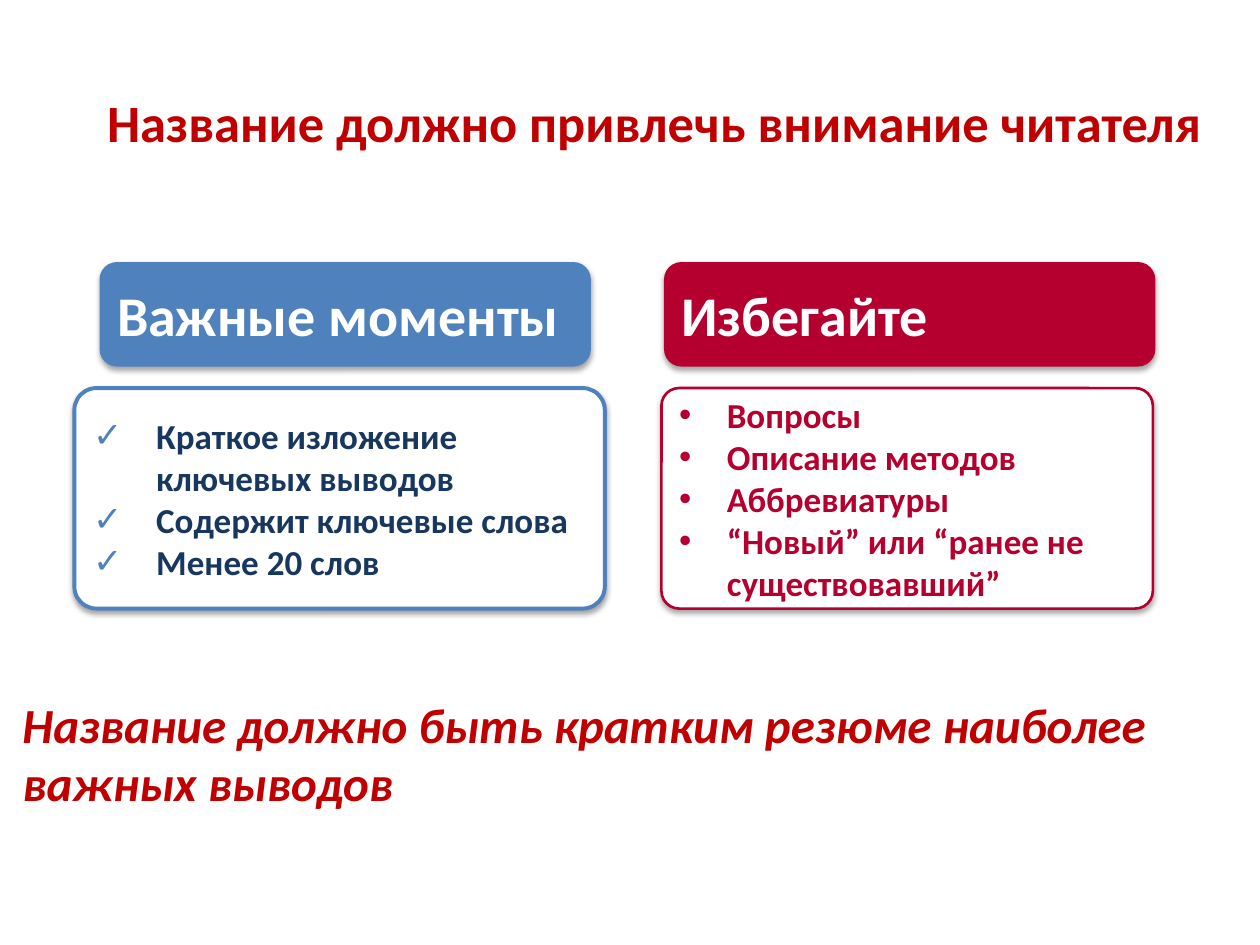
import pptx
import pptx.dml.color
import pptx.enum.shapes
import pptx.enum.text
import pptx.oxml.ns
import pptx.util
from lxml import etree
from pptx.util import Inches

COLORS = {
    "white": "FFFFFF",
    "blue": "4F81BD",
    "navy": "17375E",
    "crimson": "B5002F",
    "red": "C00000",
    "shadow": "000000",
}
ANCHOR = pptx.enum.text.MSO_ANCHOR
ALIGN = pptx.enum.text.PP_ALIGN


def rgb(name):
    return pptx.dml.color.RGBColor.from_string(COLORS[name])


def add_element(parent, tag, **attributes):
    return etree.SubElement(parent, pptx.oxml.ns.qn(tag), attributes)


def add_shadow(shape):
    shape.shadow.inherit = False
    effects = shape._element.spPr.find(pptx.oxml.ns.qn("a:effectLst"))
    shadow = add_element(effects, "a:outerShdw", blurRad="40000", dist="23000",
                         dir="5400000", rotWithShape="0")
    color = add_element(shadow, "a:srgbClr", val=COLORS["shadow"])
    add_element(color, "a:alpha", val="35000")


def add_bullet(paragraph, character, color, indent):
    properties = paragraph._p.get_or_add_pPr()
    properties.set("marL", str(Inches(indent)))
    properties.set("indent", str(-Inches(indent)))
    bullet_color = add_element(properties, "a:buClr")
    add_element(bullet_color, "a:srgbClr", val=COLORS[color])
    add_element(properties, "a:buFont", typeface="Arial")
    add_element(properties, "a:buChar", char=character)


def write(shape, lines, size, color, anchor=ANCHOR.MIDDLE, align=ALIGN.LEFT,
          italic=False, bullet=None):
    frame = shape.text_frame
    frame.word_wrap = True
    frame.vertical_anchor = anchor
    frame.text = "\n".join(lines)
    for paragraph in frame.paragraphs:
        paragraph.alignment = align
        if bullet:
            add_bullet(paragraph, *bullet)
        font = paragraph.font
        font.name = "Calibri"
        font.size = pptx.util.Pt(size)
        font.bold = True
        font.italic = italic
        font.color.rgb = rgb(color)


def add_text(slide, box, text, size, **style):
    shape = slide.shapes.add_textbox(*map(Inches, box))
    write(shape, [text], size, "red", **style)


def add_panel(slide, box, fill, rounding=0.167, line=None, line_width=0):
    shape = slide.shapes.add_shape(
        pptx.enum.shapes.MSO_SHAPE.ROUNDED_RECTANGLE, *map(Inches, box))
    shape.adjustments[0] = rounding
    shape.fill.solid()
    shape.fill.fore_color.rgb = rgb(fill)
    if line:
        shape.line.color.rgb = rgb(line)
        shape.line.width = pptx.util.Pt(line_width)
    else:
        shape.line.fill.background()
    add_shadow(shape)
    return shape


def add_column(slide, heading, heading_left, list_left, list_width, items,
               accent, text_color, rounding, line_width, bullet):
    header = add_panel(slide, (heading_left, 2.08, 3.9, 0.83), accent)
    write(header, [heading], 32, "white")
    body = add_panel(slide, (list_left, 3.08, list_width, 1.75), "white",
                     rounding, accent, line_width)
    write(body, items, 20, text_color, bullet=bullet)


def main():
    presentation = pptx.Presentation()
    presentation.slide_width = Inches(10)
    presentation.slide_height = Inches(7.5)
    slide = presentation.slides.add_slide(presentation.slide_layouts[6])

    add_text(slide, (0.57, 0.8, 9.25, 0.33),
             "Название должно привлечь внимание читателя", 30,
             align=ALIGN.CENTER)
    add_column(slide, "Важные моменты", 0.79, 0.59, 4.21,
               ["Краткое изложение ключевых выводов",
                "Содержит ключевые слова",
                "Менее 20 слов"],
               "blue", "navy", 0.1, 2.25, ("✓", "blue", 0.5))
    add_column(slide, "Избегайте", 5.27, 5.25, 3.9,
               ["Вопросы",
                "Описание методов",
                "Аббревиатуры",
                "“Новый” или “ранее не существовавший”"],
               "crimson", "crimson", 0.08, 1.5, ("•", "crimson", 0.38))
    add_text(slide, (0.08, 5.46, 9.83, 1.04),
             "Название должно быть кратким резюме наиболее важных выводов", 28,
             anchor=ANCHOR.TOP, italic=True)
    presentation.save("out.pptx")


if __name__ == "__main__":
    main()
